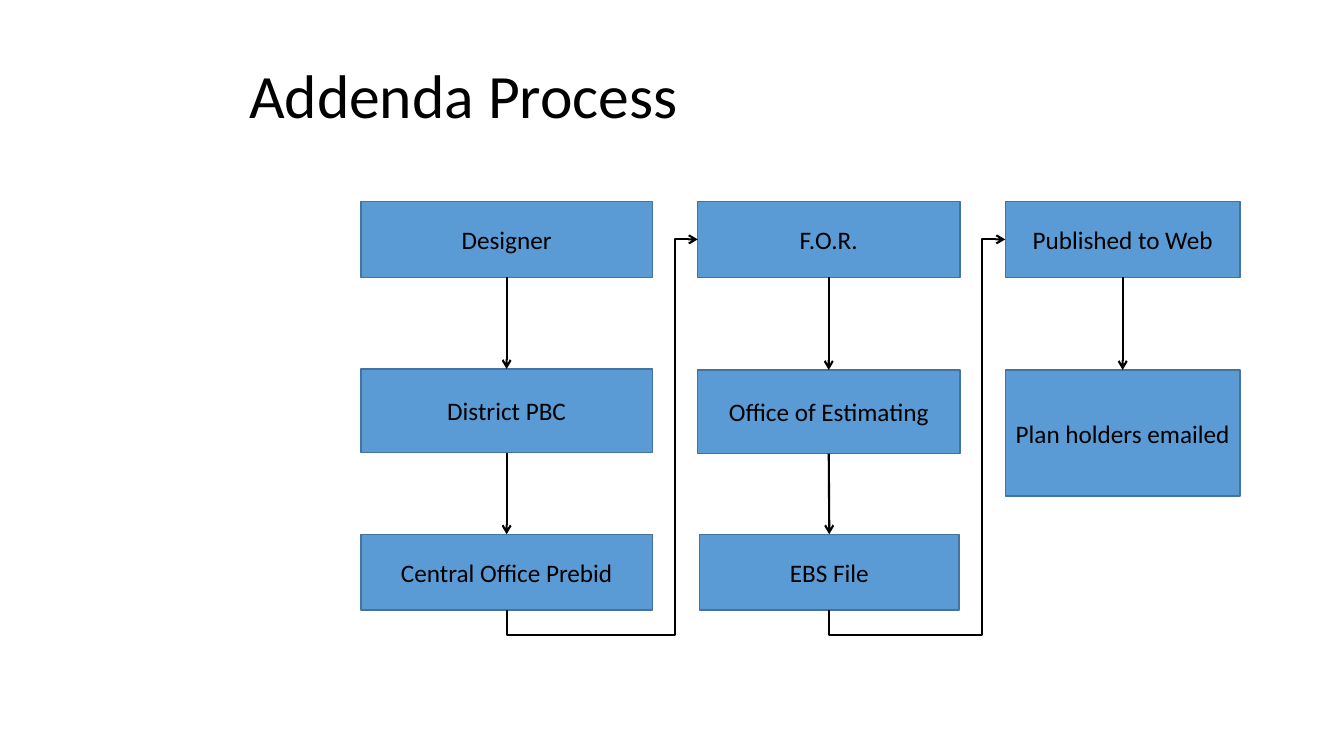
from lxml import etree
from pptx import Presentation
from pptx.dml.color import RGBColor
from pptx.enum.shapes import MSO_CONNECTOR, MSO_SHAPE
from pptx.enum.text import MSO_ANCHOR, PP_ALIGN
from pptx.oxml.ns import qn
from pptx.util import Inches, Pt

# Content: each column lists its steps as (text, left, top, width, height)
TITLE = "Addenda Process"
COLUMNS = [
    [("Designer", 3.58, 2, 2.89, 0.75),
     ("District PBC", 3.58, 3.66, 2.89, 0.83),
     ("Central Office Prebid", 3.58, 5.3, 2.89, 0.75)],
    [("F.O.R.", 6.92, 2, 2.6, 0.75),
     ("Office of Estimating", 6.92, 3.67, 2.6, 0.83),
     ("EBS File", 6.94, 5.3, 2.57, 0.75)],
    [("Published to Web", 9.97, 2, 2.33, 0.75),
     ("Plan holders emailed", 9.97, 3.67, 2.33, 1.25)],
]
COLORS = {"fill": "5B9BD5", "edge": "43739E", "ink": "000000"}
FONT = "Calibri"
TOP, LEFT, BOTTOM = 0, 1, 2
DROP, LEAD = Inches(0.25), Inches(0.23)  # bend below a box, bend before a box


def color(name):
    return RGBColor.from_string(COLORS[name])


def write(shape, text, size, align):
    frame = shape.text_frame
    frame.word_wrap = True
    frame.vertical_anchor = MSO_ANCHOR.MIDDLE
    para = frame.paragraphs[0]
    para.alignment = align
    run = para.add_run()
    run.text = text
    run.font.name = FONT
    run.font.size = Pt(size)
    run.font.color.rgb = color("ink")
    return para


def add_step(slide, text, *place):
    box = slide.shapes.add_shape(
        MSO_SHAPE.FLOWCHART_PROCESS, *[Inches(v) for v in place])
    box.shadow.inherit = False
    box.fill.solid()
    box.fill.fore_color.rgb = color("fill")
    box.line.color.rgb = color("edge")
    box.line.width = Pt(1)
    write(box, text, 18, PP_ALIGN.CENTER)
    return box


def add_arrow(slide, kind, start, end, side):
    arrow = slide.shapes.add_connector(kind, 0, 0, 0, 0)
    arrow.begin_connect(start, BOTTOM)
    arrow.end_connect(end, side)
    arrow.line.color.rgb = color("ink")
    arrow.line.width = Pt(1.5)
    props = arrow._element.spPr
    etree.SubElement(props.find(qn("a:ln")), qn("a:tailEnd"), type="arrow")
    etree.SubElement(props, qn("a:effectLst"))
    return arrow


def add_bend(slide, start, end):
    """Run under the start box, up the gap and into the end box."""
    arrow = add_arrow(slide, MSO_CONNECTOR.ELBOW, start, end, LEFT)
    across, rise = arrow.width, arrow.height
    mid_x, mid_y = arrow.left + across // 2, arrow.top + rise // 2

    # A quarter turn swaps the width and height around the same centre
    arrow.left, arrow.top = mid_x - rise // 2, mid_y - across // 2
    arrow.width, arrow.height = rise, across
    props = arrow._element.spPr
    frame = props.find(qn("a:xfrm"))
    for key, value in (("rot", "5400000"), ("flipH", "1"), ("flipV", "1")):
        frame.set(key, value)

    # Place the two bends
    geom = props.find(qn("a:prstGeom"))
    geom.set("prst", "bentConnector4")
    guides = geom.find(qn("a:avLst"))
    if guides is None:
        guides = etree.SubElement(geom, qn("a:avLst"))
    bends = (-DROP / rise, 1 - LEAD / across)
    for num, part in enumerate(bends, 1):
        etree.SubElement(guides, qn("a:gd"), name=f"adj{num}",
                         fmla=f"val {round(part * 100000)}")


def main():
    deck = Presentation()
    deck.slide_width, deck.slide_height = Inches(13.33), Inches(7.5)
    slide = deck.slides.add_slide(deck.slide_layouts[5])

    # Title
    title = slide.shapes.title
    title.left, title.top = Inches(2.37), Inches(0.13)
    title.width, title.height = Inches(9.63), Inches(1.69)
    write(title, TITLE, 44, PP_ALIGN.LEFT).line_spacing = 0.9

    # Steps
    grid = [[add_step(slide, *step) for step in col] for col in COLUMNS]

    # Arrows from column to column, then down each column
    for col, after in zip(grid, grid[1:]):
        add_bend(slide, col[-1], after[0])
    for col in grid:
        for start, end in zip(col, col[1:]):
            add_arrow(slide, MSO_CONNECTOR.STRAIGHT, start, end, TOP)

    deck.save("out.pptx")


if __name__ == "__main__":
    main()
